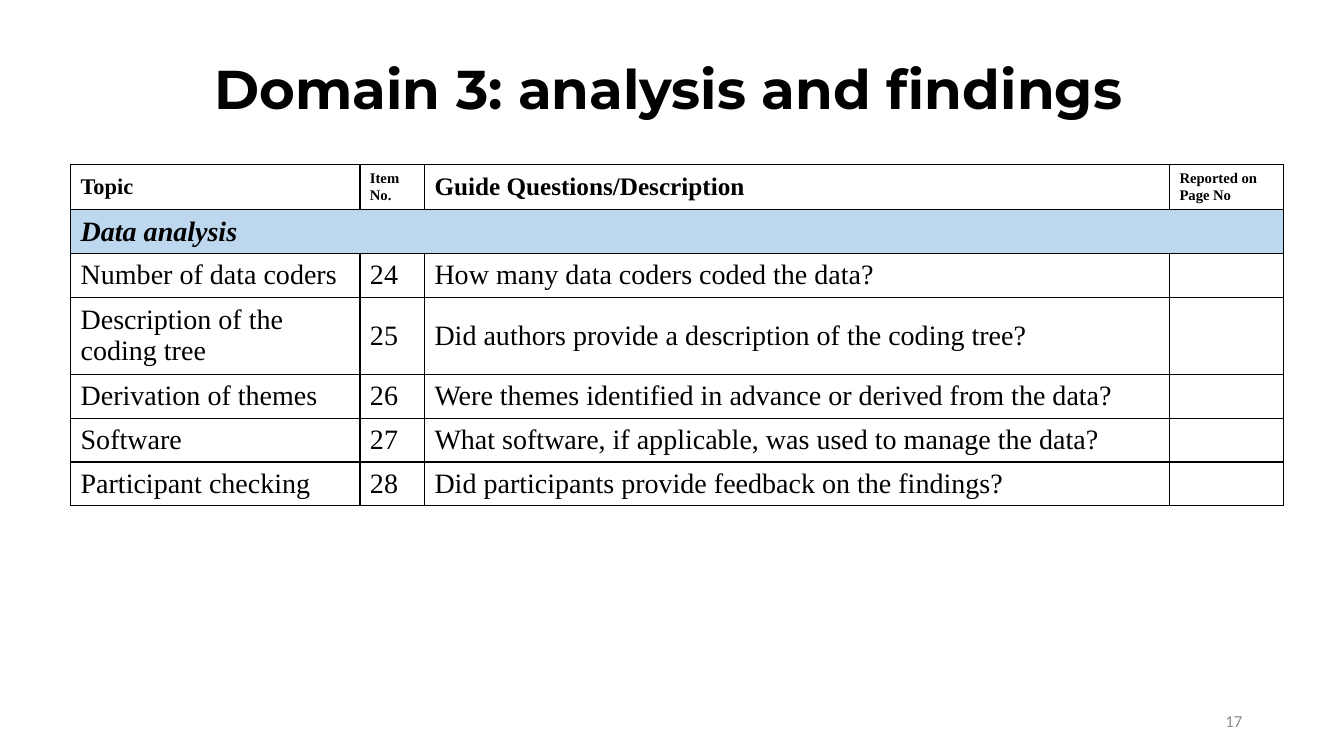
from dataclasses import dataclass

from lxml import etree
from pptx import Presentation
from pptx.dml.color import RGBColor
from pptx.enum.text import MSO_ANCHOR, PP_ALIGN
from pptx.oxml.ns import qn
from pptx.util import Emu, Pt

EMU_PER_PX = 9144  # 100 px to the inch
BLACK = RGBColor(0x00, 0x00, 0x00)
GRAY = RGBColor(0x8C, 0x8C, 0x8C)
LIGHT_BLUE = RGBColor(0xBD, 0xD7, 0xEE)
MIDDLE = MSO_ANCHOR.MIDDLE
LEFT, CENTER, RIGHT = PP_ALIGN.LEFT, PP_ALIGN.CENTER, PP_ALIGN.RIGHT
TABLE_FONT = "Times New Roman"
BODY_SIZE = 20
BORDER_SIDES = ("a:lnL", "a:lnR", "a:lnT", "a:lnB")


@dataclass(frozen=True)
class Column:
    heading: str
    heading_size: float
    width: int


@dataclass(frozen=True)
class Item:
    topic: str
    number: int
    question: str
    height: int = 41


COLUMNS = [
    Column("Topic", 16, 287),
    Column("Item No.", 10.5, 64),
    Column("Guide Questions/Description", 18, 739),
    Column("Reported on Page No", 10.5, 113),
]
ITEMS = [
    Item("Number of data coders", 24, "How many data coders coded the data?"),
    Item("Description of the coding tree", 25,
         "Did authors provide a description of the coding tree?", 72),
    Item("Derivation of themes", 26,
         "Were themes identified in advance or derived from the data?"),
    Item("Software", 27, "What software, if applicable, was used to manage the data?"),
    Item("Participant checking", 28, "Did participants provide feedback on the findings?"),
]
HEADING_HEIGHT, SECTION_HEIGHT = 43, 41


def px(length: int) -> Emu:
    return Emu(length * EMU_PER_PX)


def write_text(text_frame, text: str, *, size: float, font: str = TABLE_FONT,
               color: RGBColor = BLACK, bold: bool = False, italic: bool = False,
               align: PP_ALIGN = LEFT, line_spacing: float = 1.0) -> None:
    paragraph = text_frame.paragraphs[0]
    paragraph.alignment = align
    paragraph.line_spacing = line_spacing
    run = paragraph.add_run()
    run.text = text
    run.font.name = font
    run.font.size = Pt(size)
    run.font.bold = bold
    run.font.italic = italic
    run.font.color.rgb = color


def add_text_box(slide, left: int, top: int, width: int, height: int,
                 text: str, **text_format) -> None:
    text_box = slide.shapes.add_textbox(px(left), px(top), px(width), px(height))
    text_frame = text_box.text_frame
    text_frame.word_wrap = True
    text_frame.vertical_anchor = MIDDLE
    write_text(text_frame, text, **text_format)


def style_cell(cell, fill: RGBColor | None) -> None:
    cell.vertical_anchor = MIDDLE
    properties = cell._tc.get_or_add_tcPr()
    for side in BORDER_SIDES:
        line = etree.SubElement(properties, qn(side), w=str(Pt(1)))
        solid = etree.SubElement(line, qn("a:solidFill"))
        etree.SubElement(solid, qn("a:srgbClr"), val=str(BLACK))
    if fill is None:
        cell.fill.background()
    else:
        cell.fill.solid()
        cell.fill.fore_color.rgb = fill


def add_checklist(slide, left: int, top: int) -> None:
    heights = [HEADING_HEIGHT, SECTION_HEIGHT] + [item.height for item in ITEMS]
    width = sum(column.width for column in COLUMNS)
    table = slide.shapes.add_table(len(heights), len(COLUMNS), px(left), px(top),
                                   px(width), px(sum(heights))).table
    table.first_row = False
    table.horz_banding = False

    # Grid, borders and fills
    for table_column, column in zip(table.columns, COLUMNS):
        table_column.width = px(column.width)
    for row_index, height in enumerate(heights):
        table.rows[row_index].height = px(height)
        for cell in table.rows[row_index].cells:
            style_cell(cell, LIGHT_BLUE if row_index == 1 else None)

    # Heading row
    for cell, column in zip(table.rows[0].cells, COLUMNS):
        write_text(cell.text_frame, column.heading, size=column.heading_size, bold=True)

    # Section row across all columns
    section = table.cell(1, 0)
    section.merge(table.cell(1, len(COLUMNS) - 1))
    write_text(section.text_frame, "Data analysis", size=BODY_SIZE, bold=True, italic=True)

    # Item rows; the page column stays empty
    for row_index, item in enumerate(ITEMS, start=2):
        values = (item.topic, str(item.number), item.question)
        for cell, value in zip(table.rows[row_index].cells, values):
            write_text(cell.text_frame, value, size=BODY_SIZE)


def main() -> None:
    presentation = Presentation()
    presentation.slide_width, presentation.slide_height = px(1333), px(750)
    slide = presentation.slides.add_slide(presentation.slide_layouts[6])

    # Title
    add_text_box(slide, -44, 19, 1414, 145, "Domain 3: analysis and findings",
                 size=39, font="Montserrat", bold=True, align=CENTER, line_spacing=0.9)
    # Checklist table
    add_checklist(slide, 70, 163)
    # Slide number
    add_text_box(slide, 942, 695, 300, 40, "17",
                 size=12, font="Calibri", color=GRAY, align=RIGHT)

    presentation.save("out.pptx")


if __name__ == "__main__":
    main()
